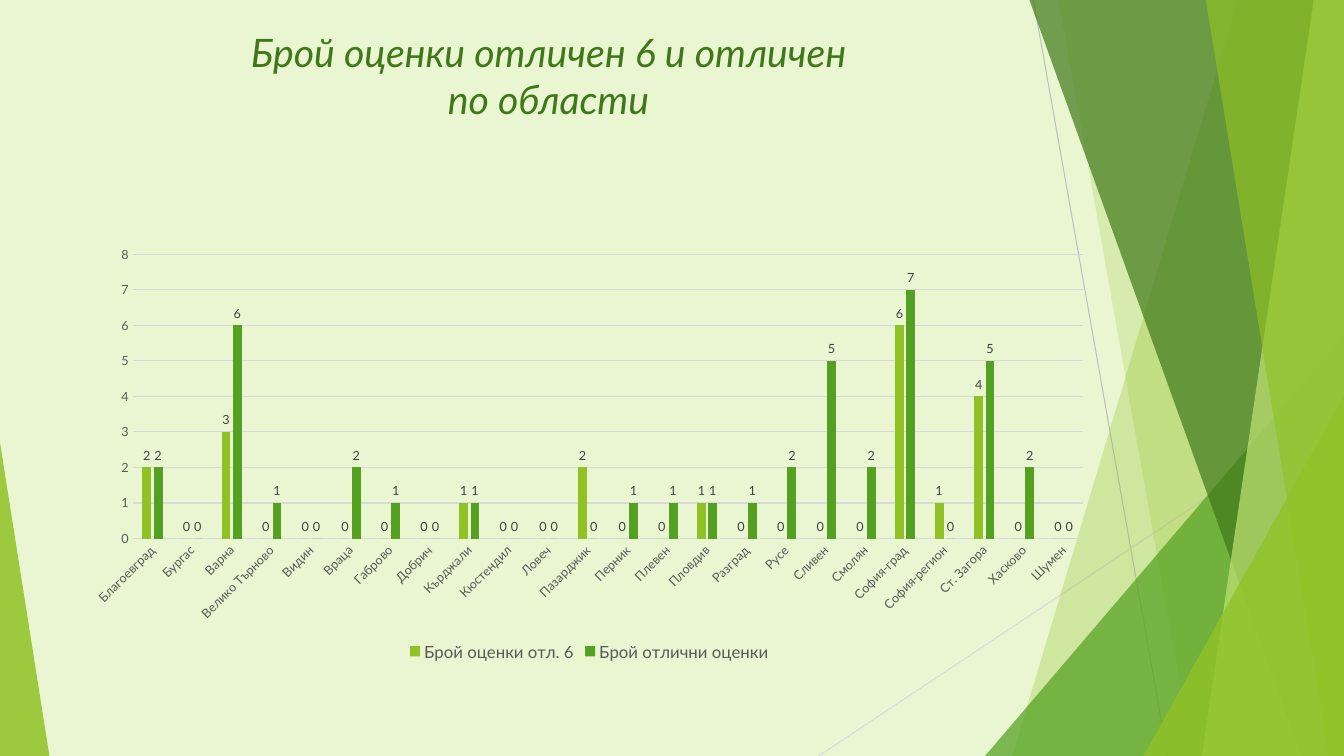
from pptx import Presentation
from pptx.chart.data import CategoryChartData
from pptx.dml.color import RGBColor
from pptx.enum import chart as charts, shapes, text
from pptx.oxml import ns
from pptx.util import Inches, Pt
from lxml import etree

FONT = "Lato"
LIME, GREEN, DARK_GREEN, PALE_LIME = "90C226", "54A021", "3F7819", "C0E474"
GRID, LABEL = "D9D9D9", "595959"

# Region, count of full 6.00 marks, count of excellent marks
REGIONS = [
    ("Благоевград", 2, 2), ("Бургас", 0, 0), ("Варна", 3, 6),
    ("Велико Търново", 0, 1), ("Видин", 0, 0), ("Враца", 0, 2),
    ("Габрово", 0, 1), ("Добрич", 0, 0), ("Кърджали", 1, 1),
    ("Кюстендил", 0, 0), ("Ловеч", 0, 0), ("Пазарджик", 2, 0),
    ("Перник", 0, 1), ("Плевен", 0, 1), ("Пловдив", 1, 1),
    ("Разград", 0, 1), ("Русе", 0, 2), ("Сливен", 0, 5),
    ("Смолян", 0, 2), ("София-град", 6, 7), ("София-регион", 1, 0),
    ("Ст. Загора", 4, 5), ("Хасково", 0, 2), ("Шумен", 0, 0),
]
SERIES = [("Брой оценки отл. 6", LIME), ("Брой отлични оценки", GREEN)]


def rgb(color):
    return RGBColor.from_string(color)


def style_font(font, size, color):
    font.name, font.size = FONT, Pt(size)
    font.color.rgb = rgb(color)


def paint(shape, color, opacity):
    """Flat fill with the given opacity in percent, no outline."""
    shape.shadow.inherit = False
    shape.fill.solid()
    shape.fill.fore_color.rgb = rgb(color)
    shape.line.fill.background()
    color_node = next(shape.fill._xPr.iter(ns.qn("a:srgbClr")))
    etree.SubElement(color_node, ns.qn("a:alpha")).set("val", str(opacity * 1000))


def add_line(page, start, end, color):
    line = page.shapes.add_connector(
        shapes.MSO_CONNECTOR.STRAIGHT, *map(Inches, start + end))
    line.line.color.rgb = rgb(color)
    line.line.width = Pt(0.75)
    etree.SubElement(line._element.spPr, ns.qn("a:effectLst"))


def add_band(page, top_left, bottom_left, color, opacity):
    """Full-height band running from a slanted left side to the right edge."""
    corners = [(top_left, 0), (13.33, 0), (13.33, 7.5), (bottom_left, 7.5)]
    points = [(Inches(x), Inches(y)) for x, y in corners]
    builder = page.shapes.build_freeform(*points[0])
    builder.add_line_segments(points[1:], close=True)
    paint(builder.convert_to_shape(), color, opacity)


def add_triangle(page, left, top, width, apex, color, opacity):
    """Triangle standing on the bottom edge; apex 0 is left, 1 is right."""
    triangle = page.shapes.add_shape(
        shapes.MSO_SHAPE.ISOSCELES_TRIANGLE,
        *map(Inches, (left, top, width, 7.5 - top)))
    triangle.adjustments[0] = apex
    paint(triangle, color, opacity)


def add_decoration(page):
    add_line(page, (10.25, 0), (11.58, 7.5), "BFBFBF")
    add_line(page, (13.33, 4.03), (8.12, 7.5), GRID)
    add_band(page, 12.28, 10.04, LIME, 30)
    add_band(page, 10.5, 11.83, LIME, 20)
    add_triangle(page, 9.77, 3.33, 3.56, 1, GREEN, 72)
    add_band(page, 10.21, 12.91, DARK_GREEN, 70)
    add_band(page, 13.03, 11.92, PALE_LIME, 70)
    add_band(page, 11.96, 13.18, LIME, 65)
    add_triangle(page, 11.34, 3.93, 1.99, 1, LIME, 80)
    add_triangle(page, 0, 4.39, 0.49, 0, LIME, 85)


def set_title(page, lines):
    title = page.shapes.title
    title.left, title.top = Inches(0.74), Inches(0.23)
    title.width, title.height = Inches(9.4), Inches(1.44)
    frame = title.text_frame
    frame.vertical_anchor = text.MSO_ANCHOR.TOP
    para = frame.paragraphs[0]
    para.alignment = text.PP_ALIGN.CENTER
    para.line_spacing = 1.0
    for number, line in enumerate(lines):
        if number:
            para.add_line_break()
        span = para.add_run()
        span.text = line
        span.font.italic = True
        style_font(span.font, 28, DARK_GREEN)


def style_axes(chart):
    regions, counts = chart.category_axis, chart.value_axis
    for axis in (regions, counts):
        axis.major_tick_mark = axis.minor_tick_mark = charts.XL_TICK_MARK.NONE
        style_font(axis.tick_labels.font, 9, LABEL)
    regions._element.txPr.bodyPr.set("rot", str(-45 * 60000))
    counts.minimum_scale, counts.maximum_scale, counts.major_unit = 0, 8, 1
    counts.has_major_gridlines = True
    counts.format.line.fill.background()
    for line in (regions.format.line, counts.major_gridlines.format.line):
        line.color.rgb = rgb(GRID)
        line.width = Pt(0.75)


def add_marks_chart(page):
    names, *columns = zip(*REGIONS)
    data = CategoryChartData(number_format="General")
    data.categories = names
    for (name, _), values in zip(SERIES, columns):
        data.add_series(name, values)
    chart = page.shapes.add_chart(
        charts.XL_CHART_TYPE.COLUMN_CLUSTERED,
        *map(Inches, (0.74, 2.36, 10.21, 4.24)), data).chart
    style_font(chart.font, 10, "000000")
    chart.has_title = False
    style_axes(chart)

    # Columns and their values
    plot = chart.plots[0]
    plot.gap_width, plot.overlap, plot.vary_by_categories = 219, -27, False
    for series, (_, color) in zip(plot.series, SERIES):
        series.format.fill.solid()
        series.format.fill.fore_color.rgb = rgb(color)
        labels = series.data_labels
        labels.show_value = True
        labels.position = charts.XL_LABEL_POSITION.OUTSIDE_END
        style_font(labels.font, 9, "404040")

    # Legend
    chart.has_legend = True
    chart.legend.position = charts.XL_LEGEND_POSITION.BOTTOM
    chart.legend.include_in_layout = False
    style_font(chart.legend.font, 12, LABEL)


def main():
    deck = Presentation()
    deck.slide_width, deck.slide_height = Inches(13.33), Inches(7.5)
    page = deck.slides.add_slide(deck.slide_layouts.get_by_name("Title Only"))
    page.background.fill.solid()
    page.background.fill.fore_color.rgb = rgb("EAF6D1")
    add_decoration(page)
    set_title(page, ["Брой оценки отличен 6 и отличен", "по области"])
    add_marks_chart(page)
    deck.save("out.pptx")


if __name__ == "__main__":
    main()
